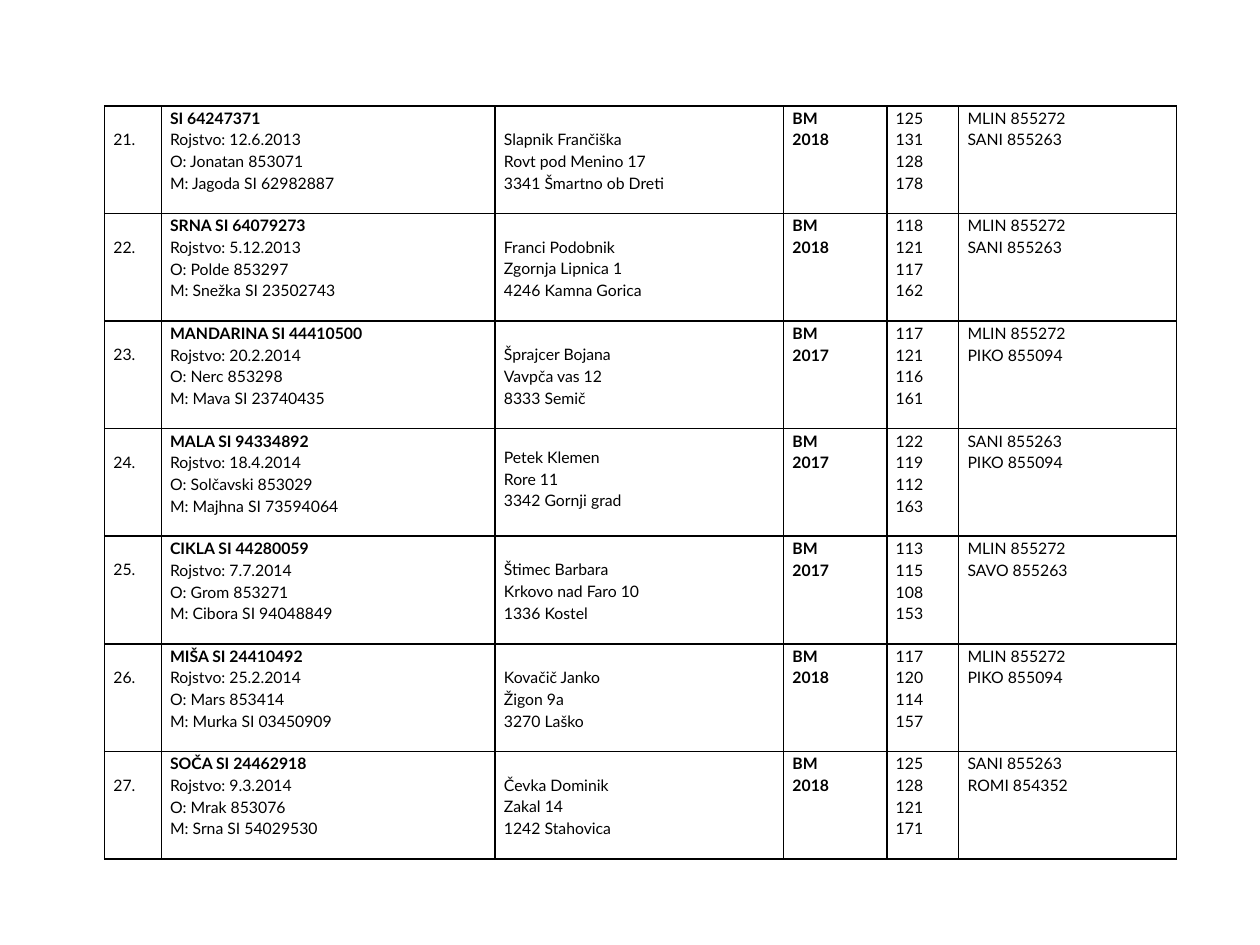
from lxml import etree
from pptx import Presentation
from pptx.dml.color import RGBColor
from pptx.enum.text import PP_ALIGN
from pptx.oxml.ns import qn
from pptx.util import Inches, Pt

JUSTIFY = PP_ALIGN.JUSTIFY
FONT, SIZE, BLACK = "Lato", 9, "000000"
LEFT, TOP, HEIGHT = 0.83, 0.84, 5.98
COLUMNS = [0.45, 2.65, 2.29, 0.82, 0.57, 1.73]
SIDE_MARGIN, LINE = 0.07, 0.17
LOW_COLUMNS = (0, 2)  # number and owner start one line lower
OWNER_24 = (3, 2)  # this owner starts a little higher than the others
OWNER_24_OFFSET = 0.13

# number, animal (name, birth, father, mother), owner, year, values, bulls
ANIMALS = [
    ("21.", ("SI 64247371", "12.6.2013", "Jonatan 853071", "Jagoda SI 62982887"),
     ("Slapnik Frančiška", "Rovt pod Menino 17", "3341 Šmartno ob Dreti"),
     "2018", (125, 131, 128, 178), ("MLIN 855272", "SANI 855263")),
    ("22.", ("SRNA SI 64079273", "5.12.2013", "Polde 853297", "Snežka SI 23502743"),
     ("Franci Podobnik", "Zgornja Lipnica 1", "4246 Kamna Gorica"),
     "2018", (118, 121, 117, 162), ("MLIN 855272", "SANI 855263")),
    ("23.", ("MANDARINA SI 44410500", "20.2.2014", "Nerc 853298", "Mava SI 23740435"),
     ("Šprajcer Bojana", "Vavpča vas 12", "8333 Semič"),
     "2017", (117, 121, 116, 161), ("MLIN 855272", "PIKO 855094")),
    ("24.", ("MALA SI 94334892", "18.4.2014", "Solčavski 853029", "Majhna SI 73594064"),
     ("Petek Klemen", "Rore 11", "3342 Gornji grad"),
     "2017", (122, 119, 112, 163), ("SANI 855263", "PIKO 855094")),
    ("25.", ("CIKLA SI 44280059", "7.7.2014", "Grom 853271", "Cibora SI 94048849"),
     ("Štimec Barbara", "Krkovo nad Faro 10", "1336 Kostel"),
     "2017", (113, 115, 108, 153), ("MLIN 855272", "SAVO 855263")),
    ("26.", ("MIŠA SI 24410492", "25.2.2014", "Mars 853414", "Murka SI 03450909"),
     ("Kovačič Janko", "Žigon 9a", "3270 Laško"),
     "2018", (117, 120, 114, 157), ("MLIN 855272", "PIKO 855094")),
    ("27.", ("SOČA SI 24462918", "9.3.2014", "Mrak 853076", "Srna SI 54029530"),
     ("Čevka Dominik", "Zakal 14", "1242 Stahovica"),
     "2018", (125, 128, 121, 171), ("SANI 855263", "ROMI 854352")),
]


def cell_lines(animal):
    """Return the lines of text for each of the six cells of a row."""
    number, (name, birth, father, mother), owner, year, values, bulls = animal
    return [
        [number],
        [name, f"Rojstvo: {birth}", f"O: {father}", f"M: {mother}"],
        owner,
        ["BM", year],
        [str(v) for v in values],
        bulls,
    ]


def add_borders(cell, color, width):
    tc_pr = cell._tc.get_or_add_tcPr()
    for side in ("lnL", "lnR", "lnT", "lnB"):
        ln = etree.SubElement(tc_pr, qn(f"a:{side}"), w=str(Pt(width)))
        fill = etree.SubElement(ln, qn("a:solidFill"))
        etree.SubElement(fill, qn("a:srgbClr"), val=color)


def fill_cell(cell, lines, top, bold_lines):
    cell.margin_left = cell.margin_right = Inches(SIDE_MARGIN)
    cell.margin_top, cell.margin_bottom = Inches(top), 0
    add_borders(cell, BLACK, 1)
    cell.fill.background()
    tf = cell.text_frame
    tf.text = "\n".join(lines)
    for i, p in enumerate(tf.paragraphs):
        p.alignment, p.line_spacing = JUSTIFY, 1.15
        font = p.runs[0].font
        font.name, font.size, font.bold = FONT, Pt(SIZE), i < bold_lines
        font.color.rgb = RGBColor.from_string(BLACK)


def main():
    prs = Presentation()
    prs.slide_width, prs.slide_height = Inches(10), Inches(7.5)
    s = prs.slides.add_slide(prs.slide_layouts[6])
    table = s.shapes.add_table(
        len(ANIMALS), len(COLUMNS), Inches(LEFT), Inches(TOP),
        Inches(sum(COLUMNS)), Inches(HEIGHT)).table
    table.first_row = table.horz_banding = False
    for column, width in zip(table.columns, COLUMNS):
        column.width = Inches(width)

    bold_lines = {1: 1, 3: 2}  # the animal's name, and the whole year cell
    for r, animal in enumerate(ANIMALS):
        for c, lines in enumerate(cell_lines(animal)):
            top = LINE if c in LOW_COLUMNS else 0
            if (r, c) == OWNER_24:
                top = OWNER_24_OFFSET
            fill_cell(table.cell(r, c), lines, top, bold_lines.get(c, 0))
    prs.save("out.pptx")


if __name__ == "__main__":
    main()
